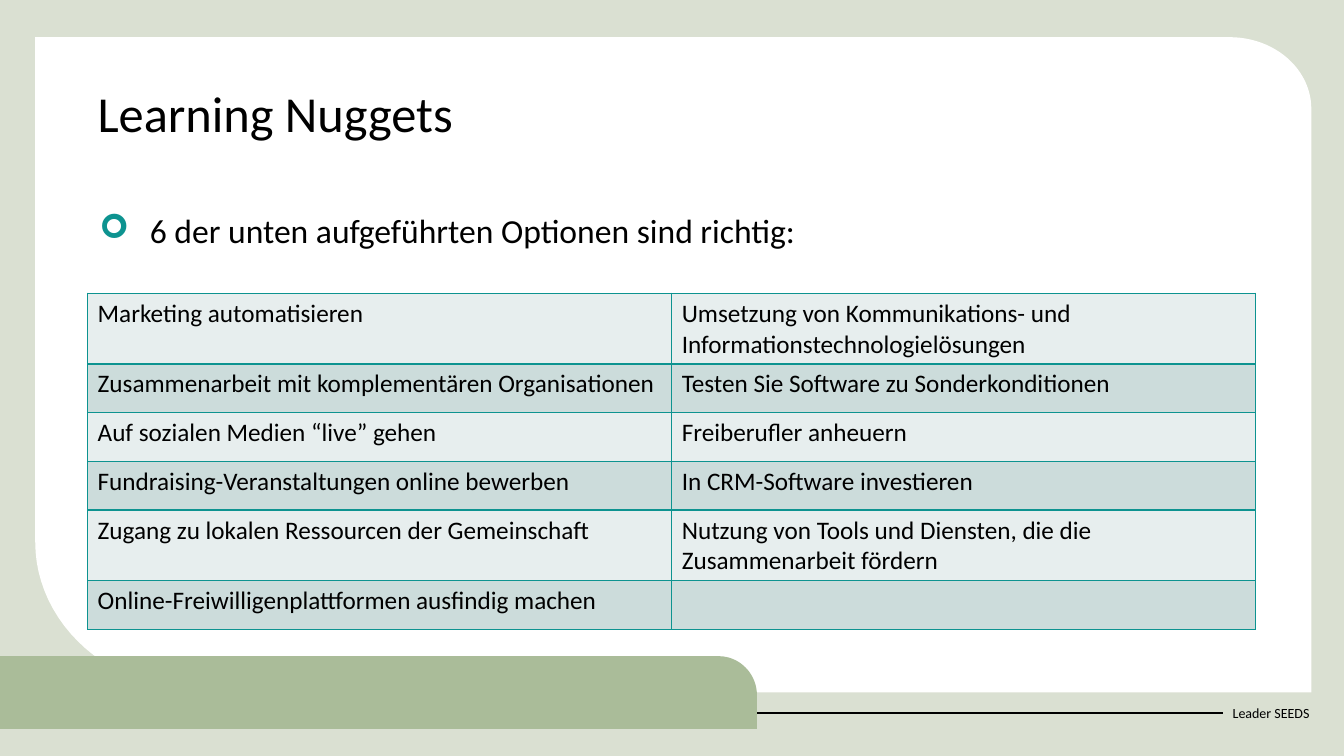
from dataclasses import dataclass
from math import cos, pi, sin

from lxml import etree
from pptx import Presentation
from pptx.dml.color import RGBColor
from pptx.enum.shapes import MSO_CONNECTOR
from pptx.enum.text import MSO_ANCHOR
from pptx.oxml.ns import qn
from pptx.util import Pt

STRAIGHT = MSO_CONNECTOR.STRAIGHT
MIDDLE, TOP = MSO_ANCHOR.MIDDLE, MSO_ANCHOR.TOP
LEFT_SIDE = 1


@dataclass(frozen=True)
class Theme:
    font: str = "Calibri"
    ink: str = "000000"
    page: str = "DAE0D2"
    panel: str = "FFFFFF"
    band: str = "AABC99"
    accent: str = "0D9390"
    rows: tuple = ("E7EEEE", "CCDCDB")
    title: int = 36
    lead: int = 24
    cell: int = 18
    footer: int = 10


THEME = Theme()

OPTIONS = [
    ("Marketing automatisieren",
     "Umsetzung von Kommunikations- und Informationstechnologielösungen"),
    ("Zusammenarbeit mit komplementären Organisationen",
     "Testen Sie Software zu Sonderkonditionen"),
    ("Auf sozialen Medien “live” gehen", "Freiberufler anheuern"),
    ("Fundraising-Veranstaltungen online bewerben", "In CRM-Software investieren"),
    ("Zugang zu lokalen Ressourcen der Gemeinschaft",
     "Nutzung von Tools und Diensten, die die Zusammenarbeit fördern"),
    ("Online-Freiwilligenplattformen ausfindig machen", ""),
]


def rgb(color):
    return RGBColor.from_string(color)


def style_text(p, size):
    for r in p.runs:
        r.font.name = THEME.font
        r.font.size = Pt(size)
        r.font.color.rgb = rgb(THEME.ink)


def quarter_arc(cx, cy, rx, ry, start, steps=24):
    """Points of a quarter ellipse, clockwise on the slide from angle start."""
    angles = [start + pi / 2 * i / steps for i in range(steps + 1)]
    return [(cx + rx * cos(a), cy + ry * sin(a)) for a in angles]


def add_rounded_panel(slide, box, color, top_right, bottom_left=None):
    """Rectangle with an elliptic top right and, if given, bottom left corner."""
    left, top, right, bottom = box
    rx, ry = top_right
    points = [(left, top)]
    points += quarter_arc(right - rx, top + ry, rx, ry, -pi / 2)
    points.append((right, bottom))
    if bottom_left:
        rx, ry = bottom_left
        points += quarter_arc(left + rx, bottom - ry, rx, ry, pi / 2)
    else:
        points.append((left, bottom))
    (x, y), *rest = [(Pt(px), Pt(py)) for px, py in points]
    builder = slide.shapes.build_freeform(x, y)
    builder.add_line_segments(rest, close=True)
    sp = builder.convert_to_shape()
    sp.shadow.inherit = False
    sp.fill.solid()
    sp.fill.fore_color.rgb = rgb(color)
    sp.line.fill.background()


def add_text(slide, box, text, size, anchor=TOP, spacing=1.0):
    sp = slide.shapes.add_textbox(*(Pt(v) for v in box))
    tf = sp.text_frame
    tf.word_wrap = True
    tf.vertical_anchor = anchor
    p = tf.paragraphs[0]
    p.text = text
    p.line_spacing = spacing
    style_text(p, size)
    return sp


def add_bullet(p, char, color, left, hanging):
    pPr = p._p.get_or_add_pPr()
    pPr.set("marL", str(Pt(left)))
    pPr.set("indent", str(-Pt(hanging)))
    clr = etree.SubElement(pPr, qn("a:buClr"))
    etree.SubElement(clr, qn("a:srgbClr"), val=color)
    etree.SubElement(pPr, qn("a:buFont"), typeface="Wingdings")
    etree.SubElement(pPr, qn("a:buChar"), char=char)


def add_rule(slide, x, target):
    """Line from x to the middle of the target's left side."""
    y = target.top + target.height // 2
    line = slide.shapes.add_connector(STRAIGHT, Pt(x), y, target.left, y)
    line.end_connect(target, LEFT_SIDE)
    line.line.color.rgb = rgb(THEME.ink)
    line.line.width = Pt(1.5)
    etree.SubElement(line._element.spPr, qn("a:effectLst"))


def add_borders(cell, color, width):
    tcPr = cell._tc.get_or_add_tcPr()
    for side in ("lnL", "lnR", "lnT", "lnB"):
        ln = etree.SubElement(tcPr, qn(f"a:{side}"), w=str(Pt(width)))
        fill = etree.SubElement(ln, qn("a:solidFill"))
        etree.SubElement(fill, qn("a:srgbClr"), val=color)


def add_options_table(slide, left, top, width, row_height):
    rows, cols = len(OPTIONS), len(OPTIONS[0])
    table = slide.shapes.add_table(rows, cols, Pt(left), Pt(top), Pt(width),
                                   Pt(row_height * rows)).table
    for i, texts in enumerate(OPTIONS):
        for j, text in enumerate(texts):
            cell = table.cell(i, j)
            add_borders(cell, THEME.accent, 1)
            cell.fill.solid()
            cell.fill.fore_color.rgb = rgb(THEME.rows[i % 2])
            cell.text_frame.text = text
            style_text(cell.text_frame.paragraphs[0], THEME.cell)


def main():
    prs = Presentation()
    prs.slide_width, prs.slide_height = Pt(960), Pt(540)
    slide = prs.slides.add_slide(prs.slide_layouts[6])

    # Page, white panel, footer and green band
    slide.background.fill.solid()
    slide.background.fill.fore_color.rgb = rgb(THEME.page)
    add_rounded_panel(slide, (25.2, 26.6, 936.7, 494.6), THEME.panel,
                      top_right=(58.3, 51.1), bottom_left=(122.4, 107.3))
    footer = add_text(slide, (873.4, 494.6, 72.7, 28.8), "Leader SEEDS",
                      THEME.footer, anchor=MIDDLE)
    add_rule(slide, 0, footer)
    add_rounded_panel(slide, (0, 468.7, 540.7, 520.6), THEME.band,
                      top_right=(27.4, 28.1))

    # Title and lead line
    left, width = 62.6, 834.5
    add_text(slide, (left, 59.8, width, 63.4), "Learning Nuggets",
             THEME.title, spacing=0.9)
    lead = add_text(slide, (left, 149.8, width, 314.6),
                    "6 der unten aufgeführten Optionen sind richtig:",
                    THEME.lead, spacing=0.9)
    add_bullet(lead.text_frame.paragraphs[0], "➢", THEME.accent, 37.4, 36)

    # Options
    add_options_table(slide, left, 209.5, width, 34.8)

    prs.save("out.pptx")


if __name__ == "__main__":
    main()
